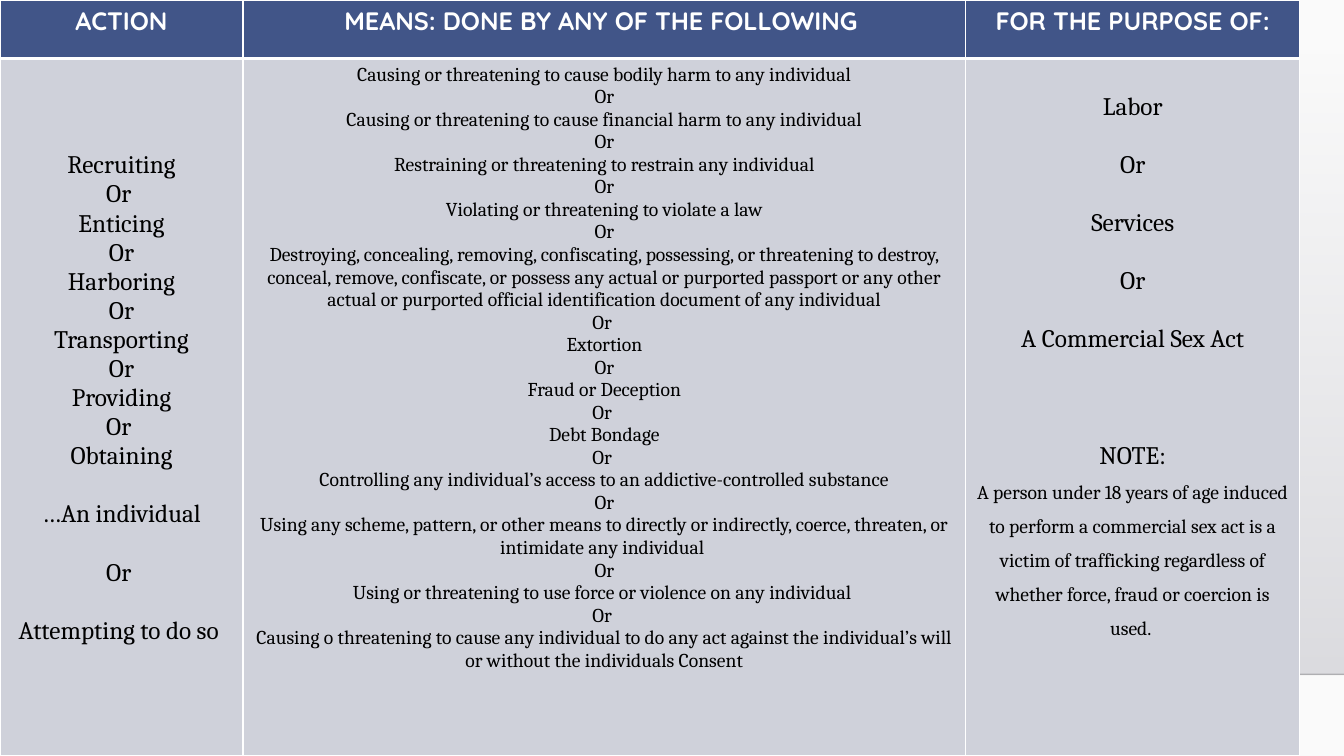
"""Builds a one-slide table of the action, means and purpose of trafficking."""
import pptx
import pptx.util
import pptx.dml.color
import pptx.enum.shapes
import pptx.enum.text
import pptx.oxml
import pptx.oxml.ns
from dataclasses import dataclass

HEADS = ["ACTION", "MEANS: DONE BY ANY OF THE FOLLOWING ", "FOR THE PURPOSE OF:"]
ACTS = ["Recruiting", "Or ", "Enticing", "Or", "Harboring", "Or", "Transporting",
        "Or", "Providing", "Or ", "Obtaining"]
TAILS = ["…An individual", "Or ", "Attempting to do so "]
MEANS = [
    "Causing or threatening to cause bodily harm to any individual", "Or",
    "Causing or threatening to cause financial harm to any individual", "Or",
    "Restraining or threatening to restrain any individual", "Or",
    "Violating or threatening to violate a law", "Or",
    "Destroying, concealing, removing, confiscating, possessing, or threatening to "
    "destroy, conceal, remove, confiscate, or possess any actual or purported passport "
    "or any other actual or purported official identification document of any individual",
    "Or ", "Extortion", "Or", "Fraud or Deception", "Or ", "Debt Bondage", "Or ",
    "Controlling any individual’s access to an addictive-controlled substance", "Or",
    "Using any scheme, pattern, or other means to directly or indirectly, coerce, "
    "threaten, or intimidate any individual ", "Or",
    "Using or threatening to use force or violence on any individual ", "Or ",
    "Causing o threatening to cause any individual to do any act against the "
    "individual’s will or without the individuals Consent",
]
GOALS = ["Labor", "Or", "Services", "Or", "A Commercial Sex Act"]
NOTE = ("A person under 18 years of age induced to perform a commercial sex act is a victim "
        "of trafficking regardless of whether force, fraud or coercion is used. ")
COLS = [2.41, 7.17, 3.31]
ROWS = [0.58, 6.92]
WIDE, HIGH = 13.33, 7.5
BAND_TOP, BAND_END = 0.51, 6.69


@dataclass
class Theme:
    """Colours, fonts and type sizes."""
    head: str = "415588"
    body: str = "CFD1DA"
    white: str = "FFFFFF"
    pale: str = "FAFAFA"
    black: str = "000000"
    rule: str = "000001"
    haze: str = "DCDCE0"
    mist: str = "DEDEE2"
    title: str = "Quicksand"
    text: str = "Cambria"
    big: int = 18
    small: int = 14
    line: float = 20.8


THEME = Theme()
Inches, Pt = pptx.util.Inches, pptx.util.Pt
NS = pptx.oxml.ns.nsdecls("a")
QN = pptx.oxml.ns.qn


def tint(code):
    """Return a colour from its hex code."""
    return pptx.dml.color.RGBColor.from_string(code)


def fade(root, stops, shade):
    """Swap the solid fill under root for a gradient."""
    marks = "".join(
        f'<a:gs pos="{pos * 1000}"><a:srgbClr val="{code}">'
        f'<a:alpha val="{clear * 1000}"/></a:srgbClr></a:gs>' for pos, code, clear in stops)
    old = next(root.iter(QN("a:solidFill")))
    new = pptx.oxml.parse_xml(
        f'<a:gradFill {NS} rotWithShape="1"><a:gsLst>{marks}</a:gsLst>{shade}</a:gradFill>')
    old.getparent().replace(old, new)


def edge(cell, widths):
    """Draw white borders: left, right, top, bottom."""
    props = cell._tc.get_or_add_tcPr()
    for spot, (side, width) in enumerate(zip("LRTB", widths)):
        props.insert(spot, pptx.oxml.parse_xml(
            f'<a:ln{side} {NS} w="{Pt(width)}"><a:solidFill><a:srgbClr val="{THEME.white}"/>'
            f'</a:solidFill><a:prstDash val="solid"/></a:ln{side}>'))


def fill_cell(cell, paras, face, ink, back, bold, widths):
    """Write paragraphs of (text, size, gap, spacing) into a cell."""
    cell.fill.solid()
    cell.fill.fore_color.rgb = tint(back)
    edge(cell, widths)
    frame = cell.text_frame
    for spot, (text, size, gap, space) in enumerate(paras):
        para = frame.add_paragraph() if spot else frame.paragraphs[0]
        para.alignment = pptx.enum.text.PP_ALIGN.CENTER
        para.line_spacing = space
        if gap:
            para.space_before = Pt(gap)
        run = para.add_run()
        run.text = text
        font = run.font
        font.name, font.size, font.bold = face, Pt(size), bold
        font.color.rgb = tint(ink)


def draw_back(slide):
    """Draw the backdrop, the shaded band and its rule."""
    slide.background.fill.solid()
    fade(slide._element, [(0, THEME.white, 100), (100, THEME.pale, 100)],
         '<a:path path="circle"><a:fillToRect l="43000" r="43000" b="100000"/></a:path>')
    band = slide.shapes.add_shape(
        pptx.enum.shapes.MSO_SHAPE.RECTANGLE, 0, Inches(BAND_TOP),
        Inches(WIDE), Inches(BAND_END - BAND_TOP))
    band.shadow.inherit = False
    band.fill.solid()
    band.fill.fore_color.rgb = tint(THEME.haze)
    fade(band._element.spPr, [(0, THEME.haze, 0), (100, THEME.mist, 100)],
         '<a:lin ang="5400000" scaled="0"/>')
    band.line.fill.background()
    rule = slide.shapes.add_connector(
        pptx.enum.shapes.MSO_CONNECTOR.STRAIGHT, 0, Inches(BAND_END),
        Inches(WIDE), Inches(BAND_END))
    rule.line.width = Pt(1)
    rule.line.color.rgb = tint(THEME.rule)
    props = rule._element.spPr
    next(props.iter(QN("a:srgbClr"))).append(
        pptx.oxml.parse_xml(f'<a:alpha {NS} val="20000"/>'))
    props.append(pptx.oxml.parse_xml(f"<a:effectLst {NS}/>"))


def draw_table(slide):
    """Draw the three-column table."""
    table = slide.shapes.add_table(
        len(ROWS), len(COLS), 0, 0, Inches(sum(COLS)), Inches(sum(ROWS))).table
    table.horz_banding = False
    for col, width in zip(table.columns, COLS):
        col.width = Inches(width)
    for row, height in zip(table.rows, ROWS):
        row.height = Inches(height)
    big, small, line = THEME.big, THEME.small, THEME.line
    bodies = [
        [(text, big, 0, 1.0) for text in ACTS] + [(text, big, line, 1.0) for text in TAILS],
        [(text, small, 0, 1.0) for text in MEANS],
        [(text, big, 0, 2.0) for text in GOALS]
        + [("NOTE:", big, 2 * line, 2.0), (NOTE, small, 0, 1.5)],
    ]
    for col, (head, body) in enumerate(zip(HEADS, bodies)):
        fill_cell(table.cell(0, col), [(head, big, 0, 1.0)], THEME.title,
                  THEME.white, THEME.head, True, (1, 1, 1, 3))
        fill_cell(table.cell(1, col), body, THEME.text,
                  THEME.black, THEME.body, False, (1, 1, 3, 1))
    table.cell(1, 0).margin_top = Inches(0.92)


def main():
    """Build and save the deck."""
    deck = pptx.Presentation()
    deck.slide_width, deck.slide_height = Inches(WIDE), Inches(HIGH)
    slide = deck.slides.add_slide(deck.slide_layouts[6])
    draw_back(slide)
    draw_table(slide)
    deck.save("out.pptx")


if __name__ == "__main__":
    main()
